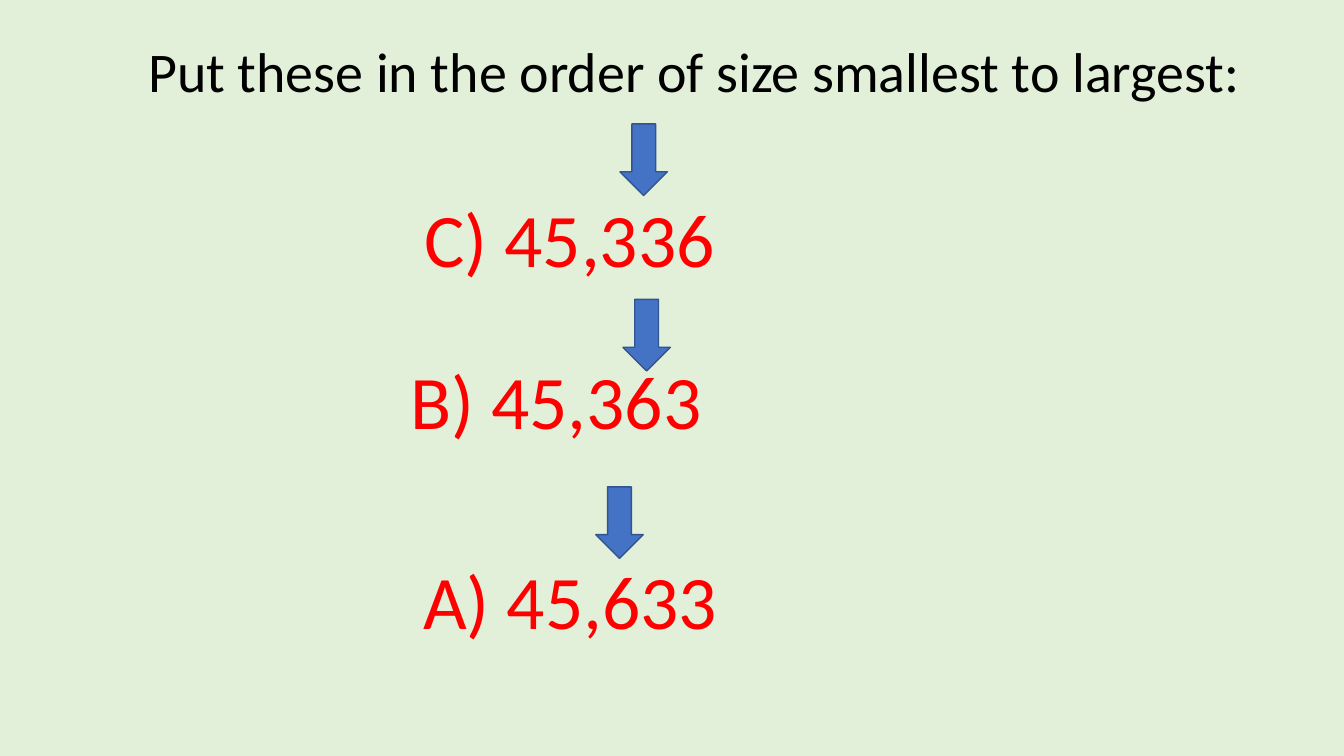
from pptx import Presentation
from pptx.dml.color import RGBColor
from pptx.enum.shapes import MSO_SHAPE
from pptx.enum.text import MSO_ANCHOR, MSO_AUTO_SIZE, PP_ALIGN
from pptx.util import Inches, Pt

PALE_GREEN = RGBColor(0xE2, 0xF0, 0xD9)
BLACK = RGBColor(0x00, 0x00, 0x00)
RED = RGBColor(0xFF, 0x00, 0x00)
BLUE = RGBColor(0x44, 0x72, 0xC4)
DARK_BLUE = RGBColor(0x32, 0x54, 0x91)

FONT = "Calibri"
TITLE_ONLY = 5
GRID_SIZE = 100
ARROW_SIZE = (3.53, 9.47)
ANSWER_HEIGHT = 13.47

ANSWERS = [
    ("C) 45,336", (30.83, 24.67), 23.4),
    ("B) 45,363", (29.78, 46.13), 23.4),
    ("A) 45,633", (30.75, 72.67), 27.15),
]
ARROWS = [(46.13, 16.4), (46.35, 39.6), (44.33, 64.4)]


class OrderingSlide:
    def __init__(self, presentation):
        self.column = presentation.slide_width / GRID_SIZE
        self.row = presentation.slide_height / GRID_SIZE
        self.slide = presentation.slides.add_slide(presentation.slide_layouts[TITLE_ONLY])
        self.slide.background.fill.solid()
        self.slide.background.fill.fore_color.rgb = PALE_GREEN

    def place(self, column, row, columns, rows):
        return (
            round(column * self.column),
            round(row * self.row),
            round(columns * self.column),
            round(rows * self.row),
        )

    def set_text(self, shape, text, size, color):
        text_frame = shape.text_frame
        text_frame.text = text
        text_frame.word_wrap = True
        text_frame.auto_size = MSO_AUTO_SIZE.SHAPE_TO_FIT_TEXT
        text_frame.vertical_anchor = MSO_ANCHOR.TOP
        paragraph = text_frame.paragraphs[0]
        paragraph.alignment = PP_ALIGN.LEFT
        paragraph.line_spacing = 1.0
        paragraph.space_before = Pt(0)
        font = paragraph.runs[0].font
        font.name = FONT
        font.size = Pt(size)
        font.color.rgb = color

    def title(self, text, column, row, columns, rows):
        shape = self.slide.shapes.title
        shape.left, shape.top, shape.width, shape.height = self.place(column, row, columns, rows)
        self.set_text(shape, text, 40, BLACK)

    def answer(self, text, position, columns):
        shape = self.slide.shapes.add_textbox(*self.place(*position, columns, ANSWER_HEIGHT))
        self.set_text(shape, text, 54, RED)

    def arrow(self, column, row):
        shape = self.slide.shapes.add_shape(
            MSO_SHAPE.DOWN_ARROW, *self.place(column, row, *ARROW_SIZE)
        )
        shape.shadow.inherit = False
        shape.fill.solid()
        shape.fill.fore_color.rgb = BLUE
        shape.line.color.rgb = DARK_BLUE
        shape.line.width = Pt(1)


def main():
    presentation = Presentation()
    presentation.slide_width = Inches(13.33)
    presentation.slide_height = Inches(7.5)
    ordering = OrderingSlide(presentation)
    ordering.title(
        "Put these in the order of size smallest to largest:", 10.28, 4.13, 83.48, 10.27
    )
    for text, position, columns in ANSWERS:
        ordering.answer(text, position, columns)
    for column, row in ARROWS:
        ordering.arrow(column, row)
    presentation.save("out.pptx")


if __name__ == "__main__":
    main()
